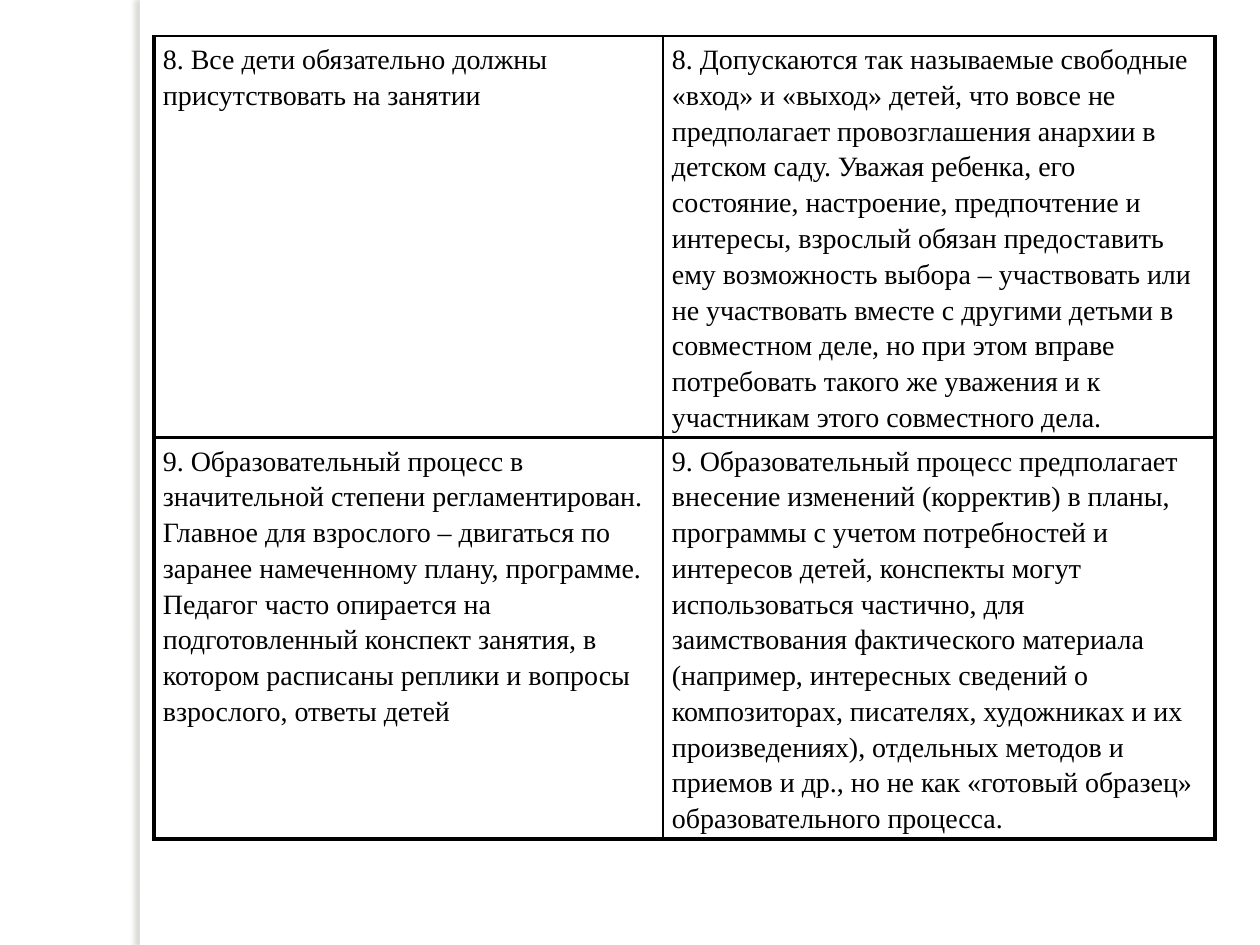
"""Build a slide with a two-column table comparing approaches to lessons."""
from lxml import etree
from pptx import Presentation
from pptx.dml.color import RGBColor
from pptx.enum.shapes import MSO_SHAPE
from pptx.oxml import parse_xml
from pptx.oxml.ns import nsdecls
from pptx.util import Pt

RECT = MSO_SHAPE.RECTANGLE
WHITE = RGBColor(0xFF, 0xFF, 0xFF)
BLACK = RGBColor(0, 0, 0)
SHADE = RGBColor(0x73, 0x6F, 0x63)
SCALE = 914400 / 126
THIN, THICK = Pt(1), Pt(2.25)
FONT = {"name": "Times New Roman", "size": Pt(16), "bold": False}
ROWS = [
    ("8. Все дети обязательно должны присутствовать на занятии",
     "8. Допускаются так называемые свободные «вход» и «выход» детей, "
     "что вовсе не предполагает провозглашения анархии в детском саду. "
     "Уважая ребенка, его состояние, настроение, предпочтение и интересы, "
     "взрослый обязан предоставить ему возможность выбора – участвовать "
     "или не участвовать вместе с другими детьми в совместном деле, но "
     "при этом вправе потребовать такого же уважения и к участникам "
     "этого совместного дела."),
    ("9. Образовательный процесс в значительной степени регламентирован. "
     "Главное для взрослого – двигаться по заранее намеченному плану, "
     "программе. Педагог часто опирается на подготовленный конспект "
     "занятия, в котором расписаны реплики и вопросы взрослого, ответы детей",
     "9. Образовательный процесс предполагает внесение изменений "
     "(корректив) в планы, программы с учетом потребностей и интересов "
     "детей, конспекты могут использоваться частично, для заимствования "
     "фактического материала (например, интересных сведений о "
     "композиторах, писателях, художниках и их произведениях), отдельных "
     "методов и приемов и др., но не как «готовый образец» "
     "образовательного процесса."),
]


def px(num):
    """Turn pixels into EMU."""
    return round(num * SCALE)


def assign(item, vals):
    """Set each attribute in a dict."""
    for key, val in vals.items():
        setattr(item, key, val)


class Page:
    """Hold the style and the current slide."""

    def __init__(self, slide, font):
        """Keep the slide and its font."""
        self.slide, self.font = slide, font

    def strip(self, *box):
        """Add a white strip with a soft shadow on its left."""
        shape = self.slide.shapes.add_shape(RECT, *map(px, box))
        shape.shadow.inherit = False
        shape.fill.solid()
        shape.fill.fore_color.rgb = WHITE
        shape.line.fill.background()
        props = shape.fill._xPr
        props.remove(props.find("{*}effectLst"))
        props.append(parse_xml(
            f'<a:effectLst {nsdecls("a")}><a:outerShdw blurRad="{Pt(3)}" '
            f'dist="{Pt(3)}" dir="10800000" algn="tl" rotWithShape="0">'
            f'<a:srgbClr val="{SHADE}"><a:alpha val="25000"/></a:srgbClr>'
            '</a:outerShdw></a:effectLst>'))

    def table(self, box, cols, high, rows):
        """Add a ruled table of text."""
        frame = self.slide.shapes.add_table(len(rows), len(cols), *map(px, box))
        grid = frame.table
        assign(grid, {"first_row": False, "horz_banding": False})
        for col, wide in zip(grid.columns, cols):
            col.width = px(wide)
        for r, texts in enumerate(rows):
            grid.rows[r].height = px(high)
            for c, text in enumerate(texts):
                edges = {"L": THIN if c else THICK,
                         "R": THICK if c == 1 else THIN,
                         "T": THICK if r else THIN, "B": THICK}
                if r == c == 0:
                    edges["R"] = THIN
                self.cell(grid.cell(r, c), text, edges)
        frame.height = px(box[3])

    def cell(self, cell, text, edges):
        """Fill one cell with text, borders and colour."""
        assign(cell, {"text": text, "margin_left": px(9), "margin_right": px(9),
                      "margin_top": px(4), "margin_bottom": px(4)})
        para = cell.text_frame.paragraphs[0]
        para.line_spacing = 1.15
        font = para.runs[0].font
        assign(font, self.font)
        font.color.rgb = BLACK
        props = cell._tc.get_or_add_tcPr()
        for side, wide in edges.items():
            props.append(etree.fromstring(
                f'<a:ln{side} {nsdecls("a")} w="{wide}"><a:solidFill>'
                f'<a:srgbClr val="{BLACK}"/></a:solidFill></a:ln{side}>'))
        cell.fill.solid()
        cell.fill.fore_color.rgb = WHITE


def main():
    """Build and save the deck."""
    deck = Presentation()
    assign(deck, {"slide_width": px(1260), "slide_height": px(945)})
    page = Page(deck.slides.add_slide(deck.slide_layouts[6]), FONT)
    page.strip(140, 0, 10, 945)
    page.table((154, 36, 1062, 867), (509, 552), 280, ROWS)
    deck.save("out.pptx")


if __name__ == "__main__":
    main()
